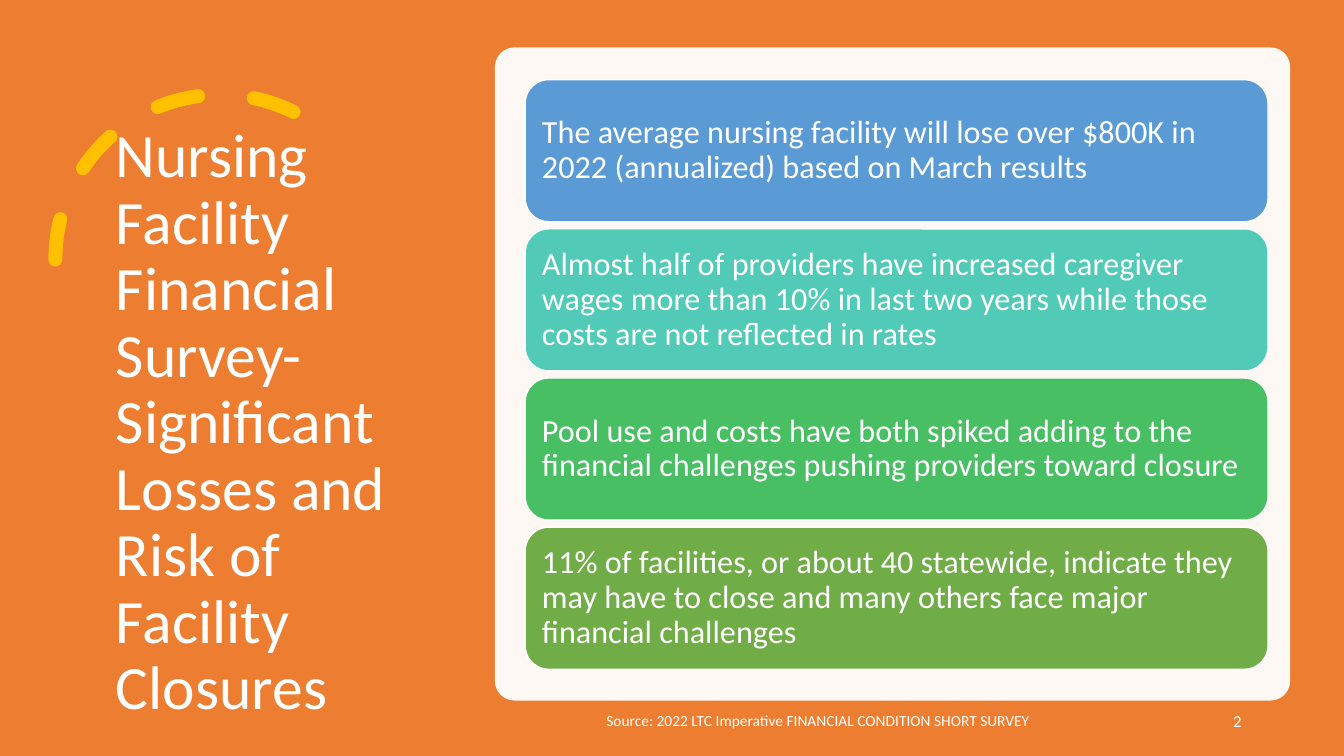
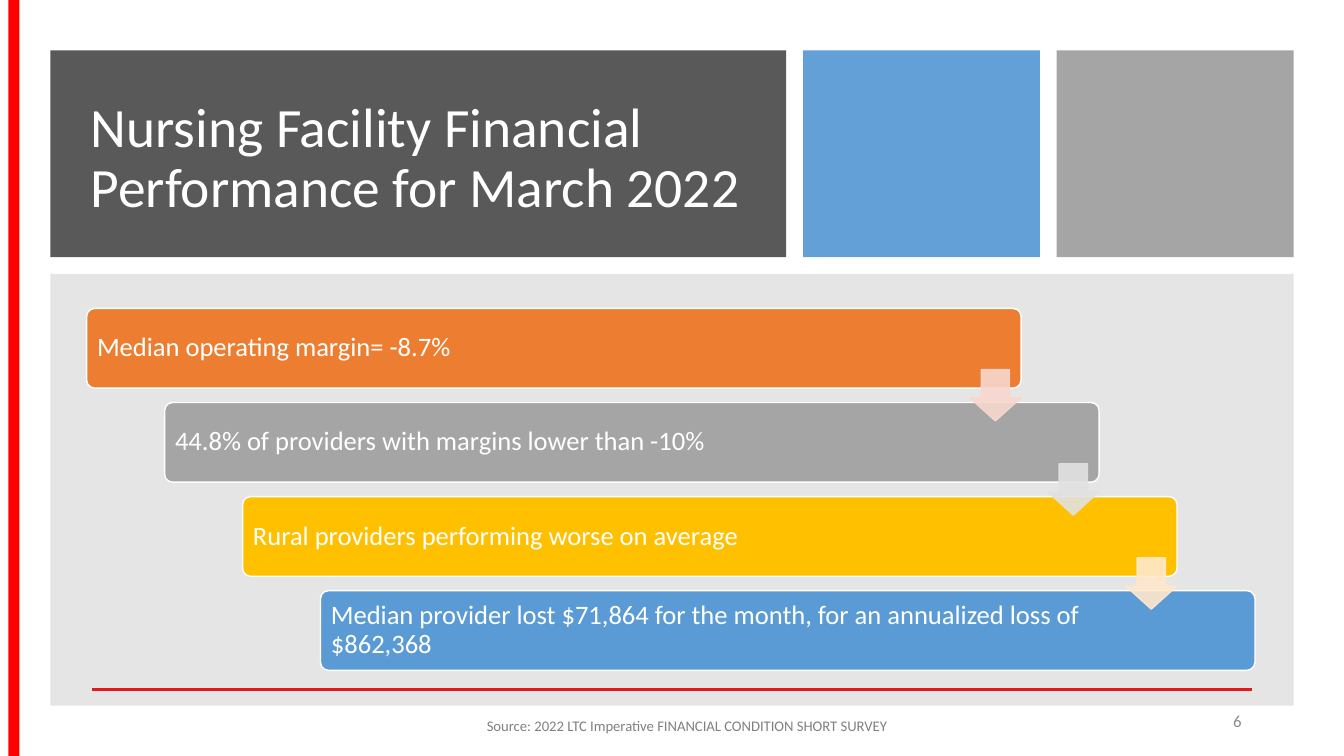
from lxml import etree
from pptx import Presentation
from pptx import util as u
from pptx.dml import color as clr
from pptx.enum import dml, shapes, text
from pptx.oxml import ns

COLS, ROWS = 80, 45
WIDE, HIGH = u.Inches(13.333), u.Inches(7.5)
FONT = "Calibri"
WHITE, ORANGE, GOLD, BLUE, GRAY, RED, DARK, MID, PALE = (
    "FFFFFF", "ED7D31", "FFC000", "5B9BD5", "A5A5A5", "FF0000",
    "595959", "808080", "8C8C8C")
SOURCE = "Source: 2022 LTC Imperative FINANCIAL CONDITION SHORT SURVEY"
LEFT, MIDDLE, RIGHT = (text.PP_ALIGN.LEFT, text.PP_ALIGN.CENTER,
                       text.PP_ALIGN.RIGHT)
KIND = shapes.MSO_SHAPE


def rgb(code):
    return clr.RGBColor.from_string(code)


def apply(item, form):
    for name, value in form.items():
        setattr(item, name, value)


def grid(x, y, w, h):
    """Turn columns and rows into left, top, width and height."""
    col, row = WIDE / COLS, HIGH / ROWS
    return [round(n) for n in (x * col, y * row, w * col, h * row)]


class Deck:
    """Holds the shared style and the current slide."""

    def __init__(self):
        self.file = Presentation()
        apply(self.file, {"slide_width": WIDE, "slide_height": HIGH})
        self.slide = None

    def page(self, back=WHITE):
        self.slide = self.file.slides.add_slide(self.file.slide_layouts[5])
        fill = self.slide.background.fill
        fill.solid()
        fill.fore_color.rgb = rgb(back)

    def letter(self, shape, words, size, color=WHITE, align=LEFT,
               space=1, inset=None):
        frame = shape.text_frame
        apply(frame, {"word_wrap": True, "auto_size": text.MSO_AUTO_SIZE.NONE,
                      "vertical_anchor": text.MSO_ANCHOR.MIDDLE})
        if inset:
            sides = ("left", "top", "right", "bottom")
            apply(frame, {f"margin_{side}": u.Inches(gap)
                          for side, gap in zip(sides, inset)})
        para = frame.paragraphs[0]
        apply(para, {"text": words, "alignment": align, "line_spacing": space})
        font = para.runs[0].font
        apply(font, {"name": FONT, "size": u.Pt(size)})
        font.color.rgb = rgb(color)

    def title(self, words, box, size):
        shape = self.slide.shapes.title
        apply(shape, dict(zip(("left", "top", "width", "height"), grid(*box))))
        self.letter(shape, words, size, space=0.9)
        # Bring the title in front of the shapes drawn so far
        self.slide.shapes._spTree.append(shape._element)

    def label(self, words, box, size, color, align=LEFT):
        shape = self.slide.shapes.add_textbox(*grid(*box))
        self.letter(shape, words, size, color, align)

    def number(self, words, color):
        self.label(words, (56.5, 41.7, 18, 2.4), 12, color, RIGHT)

    def shape(self, kind, box, fill=None, line=None, width=1, alpha=100,
              adj=()):
        shape = self.slide.shapes.add_shape(kind, *grid(*box))
        shape.shadow.inherit = False
        for part, code in ((shape.fill, fill), (shape.line.fill, line)):
            if code:
                part.solid()
                part.fore_color.rgb = rgb(code)
            else:
                part.background()
        if line:
            shape.line.width = u.Pt(width)
        for i, value in enumerate(adj):
            shape.adjustments[i] = value
        if alpha < 100:
            for node in shape._element.spPr.iter(ns.qn("a:srgbClr")):
                etree.SubElement(node, ns.qn("a:alpha"),
                                 val=str(alpha * 1000))
        return shape

    def card(self, words, box, fill, size, inset, adj=()):
        shape = self.shape(KIND.ROUNDED_RECTANGLE, box, fill, WHITE, adj=adj)
        self.letter(shape, words, size, space=0.9, inset=inset)

    def dashes(self, box, color, width, adj):
        arc = self.shape(KIND.ARC, box, None, color, width, adj=adj)
        arc.line.dash_style = dml.MSO_LINE.DASH
        props = arc._element.spPr
        props.find(ns.qn("a:xfrm")).set("flipH", "1")
        props.find(ns.qn("a:ln")).set("cap", "rnd")

    def rule(self, x, y, w, color, width):
        left, top, span, _ = grid(x, y, w, 0)
        line = self.slide.shapes.add_connector(
            shapes.MSO_CONNECTOR.STRAIGHT, left, top, left + span, top)
        line.line.color.rgb = rgb(color)
        line.line.width = u.Pt(width)
        etree.SubElement(line._element.spPr, ns.qn("a:effectLst"))


def losses(deck):
    deck.page(ORANGE)
    # Dashed arc behind the title
    deck.dashes((3.3, 5.64, 19.62, 19.62), GOLD, 10, (146.13, 0))
    deck.title("Nursing Facility Financial Survey- Significant Losses and "
               "Risk of Facility Closures", (6.3, 6.96, 19.4, 36.54), 44)
    # Panel and footer
    deck.shape(KIND.ROUNDED_RECTANGLE, (29.46, 2.82, 47.34, 38.88), WHITE,
               alpha=95, adj=(0.03,))
    deck.label(SOURCE, (35.5, 41.7, 29.7, 2.4), 11, WHITE)
    deck.number("2", WHITE)
    # Stacked cards
    cards = (
        ("The average nursing facility will lose over $800K in 2022 "
         "(annualized) based on March results", BLUE),
        ("Almost half of providers have increased caregiver wages more than "
         "10% in last two years while those costs are not reflected in rates",
         "52CAB8"),
        ("Pool use and costs have both spiked adding to the financial "
         "challenges pushing providers toward closure", "49BF64"),
        ("11% of facilities, or about 40 statewide, indicate they may have "
         "to close and many others face major financial challenges",
         "70AD47"))
    for i, (words, fill) in enumerate(cards):
        deck.card(words, (31.26, 4.74 + 8.88 * i, 44.22, 8.46), fill, 23,
                  (0.1,) * 4)


def month(deck):
    deck.page()
    # Edge bar and base line
    deck.rule(5.5, 41.04, 69, RED, 2)
    deck.shape(KIND.RECTANGLE, (0.5, 0, 0.66, ROWS), RED)
    # Header blocks, one column apart
    x = 3
    for wide, fill, alpha in ((43.8, DARK, 100), (14.1, BLUE, 95),
                              (14.1, GRAY, 100)):
        deck.shape(KIND.RECTANGLE, (x, 3, wide, 12.3), fill, alpha=alpha)
        x += wide + 1
    deck.title("Nursing Facility Financial Performance for March 2022",
               (4.8, 4.8, 40, 9.36), 39.6)
    # Panel and footer
    deck.shape(KIND.RECTANGLE, (3, 16.3, 74, 25.7), MID, alpha=20)
    deck.label(SOURCE, (19, 42, 43.8, 2.4), 10.5, MID, MIDDLE)
    deck.number("6", PALE)
    # Steps going down to the right
    steps = (
        ("Median operating margin= -8.7%", ORANGE),
        ("44.8% of providers with margins lower than -10%", GRAY),
        ("Rural providers performing worse on average", GOLD),
        ("Median provider lost $71,864 for the month, for an annualized "
         "loss of $862,368", BLUE))
    left, top, wide, dx, dy, tip = 5.16, 18.36, 55.62, 4.64, 5.6, 3.06
    for i, (words, fill) in enumerate(steps):
        deck.card(words, (left + dx * i, top + dy * i, wide, 4.74), fill, 19,
                  (0.08, 0.08, 1.37, 0.08), (0.1,))
    # Arrows at the right end of each step but the last
    for i, fill in enumerate(("F8D7CE", "E1E1E1", "FFE8CC")):
        deck.shape(KIND.DOWN_ARROW,
                   (left + wide - tip + dx * i, 22 + dy * i, tip, tip),
                   fill, fill, alpha=90, adj=(0.55, 0.45))


def main():
    deck = Deck()
    losses(deck)
    month(deck)
    deck.file.save("out.pptx")


if __name__ == "__main__":
    main()
